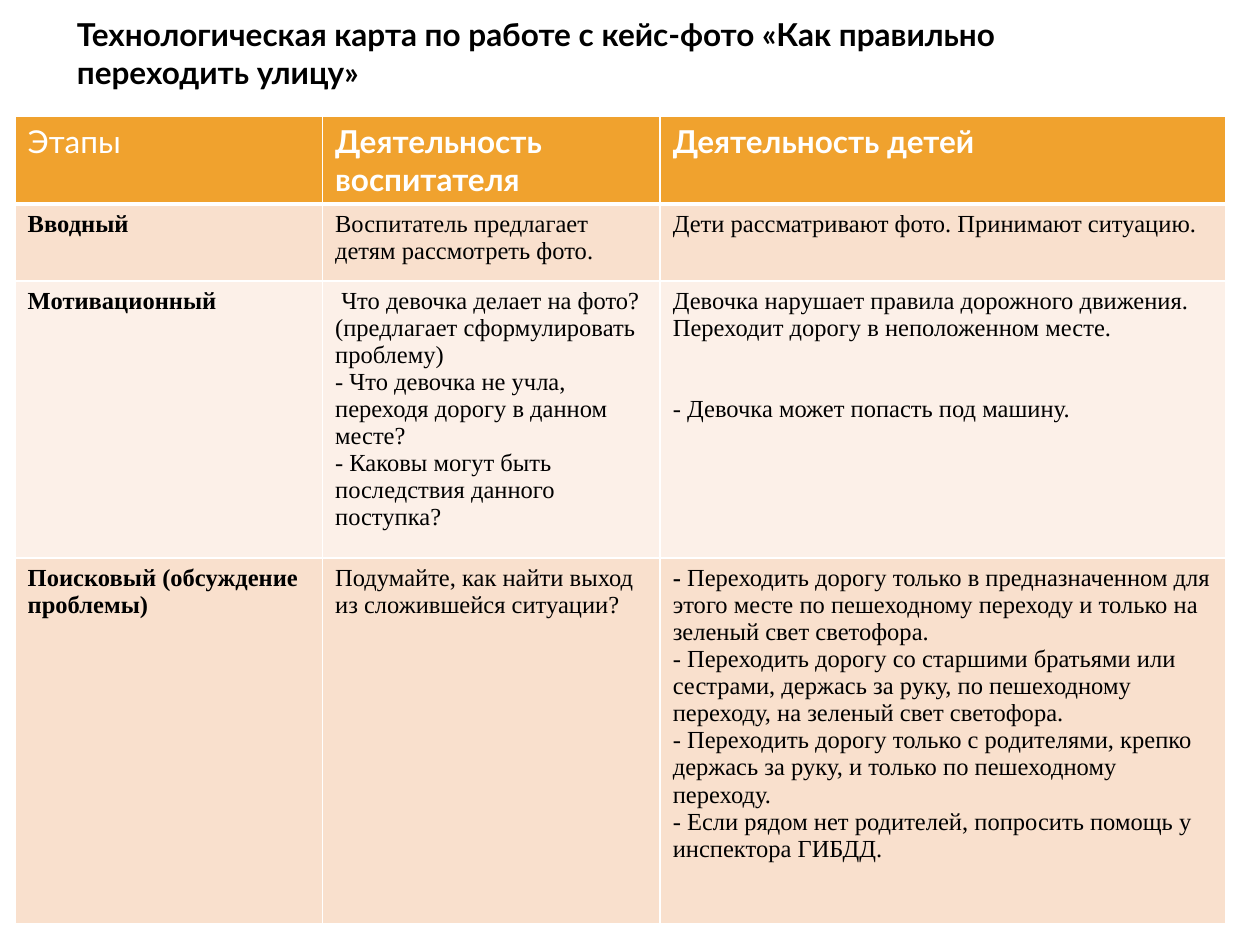
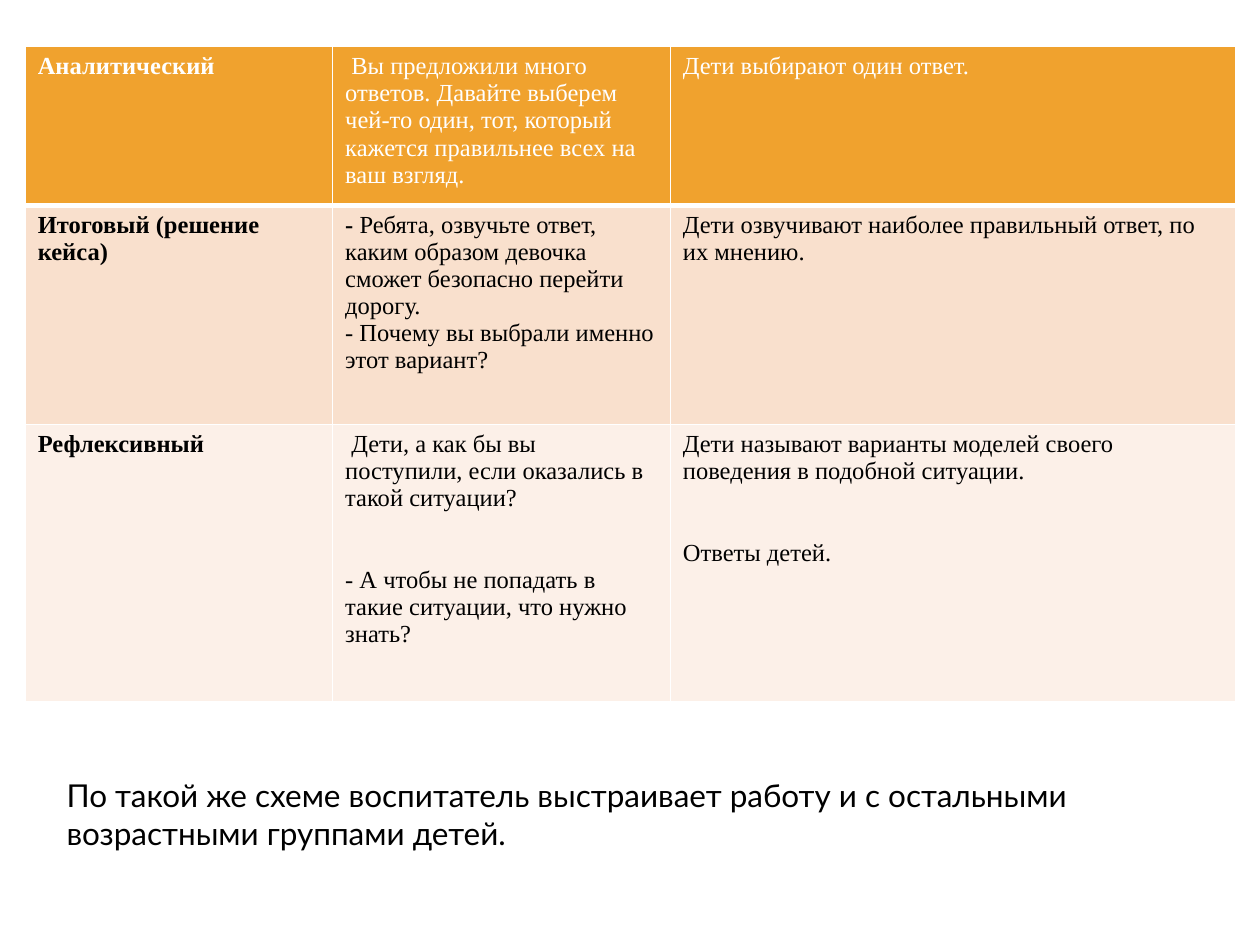
from dataclasses import dataclass

from lxml.etree import SubElement
from pptx import Presentation
from pptx.dml.color import RGBColor
from pptx.enum.text import MSO_ANCHOR, PP_ALIGN
from pptx.oxml.ns import qn
from pptx.util import Emu, Inches, Pt

# A cell is a list of paragraphs; a paragraph is a string or (bold lead, plain rest).
# GAP leaves two lines free before the paragraph that follows it.
GAP = object()

TITLE = "Технологическая карта по работе с кейс-фото «Как правильно переходить улицу»"
HEADINGS = ("Этапы", "Деятельность воспитателя", "Деятельность детей")
FIRST_STAGES = [
    ([("Вводный", "")],
     ["Воспитатель предлагает детям рассмотреть фото."],
     ["Дети рассматривают фото. Принимают ситуацию."]),
    ([("Мотивационный", "")],
     [(" ", "Что девочка делает на фото? (предлагает сформулировать проблему)"),
      "- Что девочка не учла, переходя дорогу в данном месте?",
      "- Каковы могут быть последствия данного поступка?"],
     ["Девочка нарушает правила дорожного движения. Переходит дорогу в неположенном месте.",
      GAP,
      "- Девочка может попасть под машину."]),
    ([("Поисковый (обсуждение проблемы)", "")],
     ["Подумайте, как найти выход из сложившейся ситуации?"],
     [("- ", "Переходить дорогу только в предназначенном для этого месте по пешеходному "
             "переходу и только на зеленый свет светофора."),
      "- Переходить дорогу со старшими братьями или сестрами, держась за руку, "
      "по пешеходному переходу, на зеленый свет светофора.",
      "- Переходить дорогу только с родителями, крепко держась за руку, "
      "и только по пешеходному переходу.",
      "- Если рядом нет родителей, попросить помощь у инспектора ГИБДД."]),
]
LAST_STAGES = [
    ([("Аналитический", "")],
     [(" ", "Вы предложили много ответов. Давайте выберем чей-то один, тот, "
            "который кажется правильнее всех на ваш взгляд.")],
     ["Дети выбирают один ответ."]),
    ([("Итоговый (решение кейса)", "")],
     [("- ", "Ребята, озвучьте ответ, каким образом девочка сможет безопасно перейти дорогу."),
      "- Почему вы выбрали именно этот вариант?"],
     ["Дети озвучивают наиболее правильный ответ, по их мнению."]),
    ([("Рефлексивный", "")],
     [(" ", "Дети, а как бы вы поступили, если оказались в такой ситуации?"),
      GAP,
      "- А чтобы не попадать в такие ситуации, что нужно знать?"],
     ["Дети называют варианты моделей своего поведения в подобной ситуации.",
      GAP,
      "Ответы детей."]),
]
CLOSING = ("По такой же схеме воспитатель выстраивает работу и с остальными "
           "возрастными группами детей.")


@dataclass(frozen=True)
class Theme:
    display_font: str = "Lato"
    body_font: str = "Times New Roman"
    display_size: int = 18
    body_size: int = 14
    gap: int = 31
    ink: str = "000000"
    paper: str = "FFFFFF"
    header: str = "F0A22E"
    bands: tuple = ("F9E0CD", "FCF0E8")
    rule: int = 1
    header_rule: int = 3


THEME = Theme()
COLUMNS = (2.44, 2.68, 4.49)


def write(para, text, font=THEME.body_font, size=THEME.body_size, color=THEME.ink, bold=False):
    span = para.add_run()
    span.text = text
    span.font.name, span.font.size, span.font.bold = font, Pt(size), bold
    span.font.color.rgb = RGBColor.from_string(color)


def write_display(frame, text, **style):
    frame.word_wrap = True
    write(frame.paragraphs[0], text, font=THEME.display_font, size=THEME.display_size, **style)


def write_paragraphs(frame, paragraphs, color):
    para, space = None, 0
    for item in paragraphs:
        if item is GAP:
            space = THEME.gap
            continue
        para = frame.add_paragraph() if para is not None else frame.paragraphs[0]
        para.space_before, space = Pt(space), 0
        lead, rest = item if isinstance(item, tuple) else ("", item)
        for text, bold in ((lead, True), (rest, False)):
            if text:
                write(para, text, color=color, bold=bold)


def rule_cell(cell, bottom):
    properties = cell._tc.get_or_add_tcPr()
    for side, width in zip("LRTB", (THEME.rule,) * 3 + (bottom,)):
        line = SubElement(properties, qn(f"a:ln{side}"), w=str(Pt(width)))
        fill = SubElement(line, qn("a:solidFill"))
        SubElement(fill, qn("a:srgbClr"), val=THEME.paper)


def add_grid(page, left, top, heights):
    """Add an empty table with a header row and alternating bands."""
    table = page.shapes.add_table(len(heights), len(COLUMNS), Inches(left), Inches(top),
                                  Inches(sum(COLUMNS)), Inches(sum(heights))).table
    table.horz_banding = False
    for column, width in zip(table.columns, COLUMNS):
        column.width = Inches(width)
    for index, (row, height) in enumerate(zip(table.rows, heights)):
        row.height = Inches(height)
        for cell in row.cells:
            rule_cell(cell, THEME.rule if index else THEME.header_rule)
            cell.fill.solid()
            cell.fill.fore_color.rgb = RGBColor.from_string(
                THEME.bands[(index - 1) % 2] if index else THEME.header)
    return table


def fill_stages(table, stages, first_row):
    for index, stage in enumerate(stages, first_row):
        for cell, paragraphs in zip(table.rows[index].cells, stage):
            write_paragraphs(cell.text_frame, paragraphs, THEME.ink if index else THEME.paper)


def place(box, *lengths):
    box.left, box.top, box.width, box.height = (Inches(length) for length in lengths)


def build_first_page(deck):
    page = deck.slides.add_slide(deck.slide_layouts[5])
    title = page.shapes.title
    place(title, 0.51, 0.07, 8.58, 1.01)
    title.text_frame.vertical_anchor = MSO_ANCHOR.TOP
    title.text_frame.paragraphs[0].alignment = PP_ALIGN.LEFT
    write_display(title.text_frame, TITLE, bold=True)
    table = add_grid(page, 0.12, 0.92, (0.7, 0.61, 2.2, 2.9))
    for index, heading in enumerate(HEADINGS):
        write_display(table.cell(0, index).text_frame, heading,
                      color=THEME.paper, bold=index > 0)
    fill_stages(table, FIRST_STAGES, first_row=1)


def build_last_page(deck):
    page = deck.slides.add_slide(deck.slide_layouts[6])
    table = add_grid(page, 0.2, 0.37, (1.26, 1.74, 2.2))
    fill_stages(table, LAST_STAGES, first_row=0)
    note = page.shapes.add_textbox(Emu(0), Emu(0), Emu(0), Emu(0))
    place(note, 0.43, 6.11, 9.21, 0.71)
    write_display(note.text_frame, CLOSING)


def main():
    deck = Presentation()
    deck.slide_width, deck.slide_height = Inches(10), Inches(7.5)
    build_first_page(deck)
    build_last_page(deck)
    deck.save("out.pptx")


if __name__ == "__main__":
    main()
